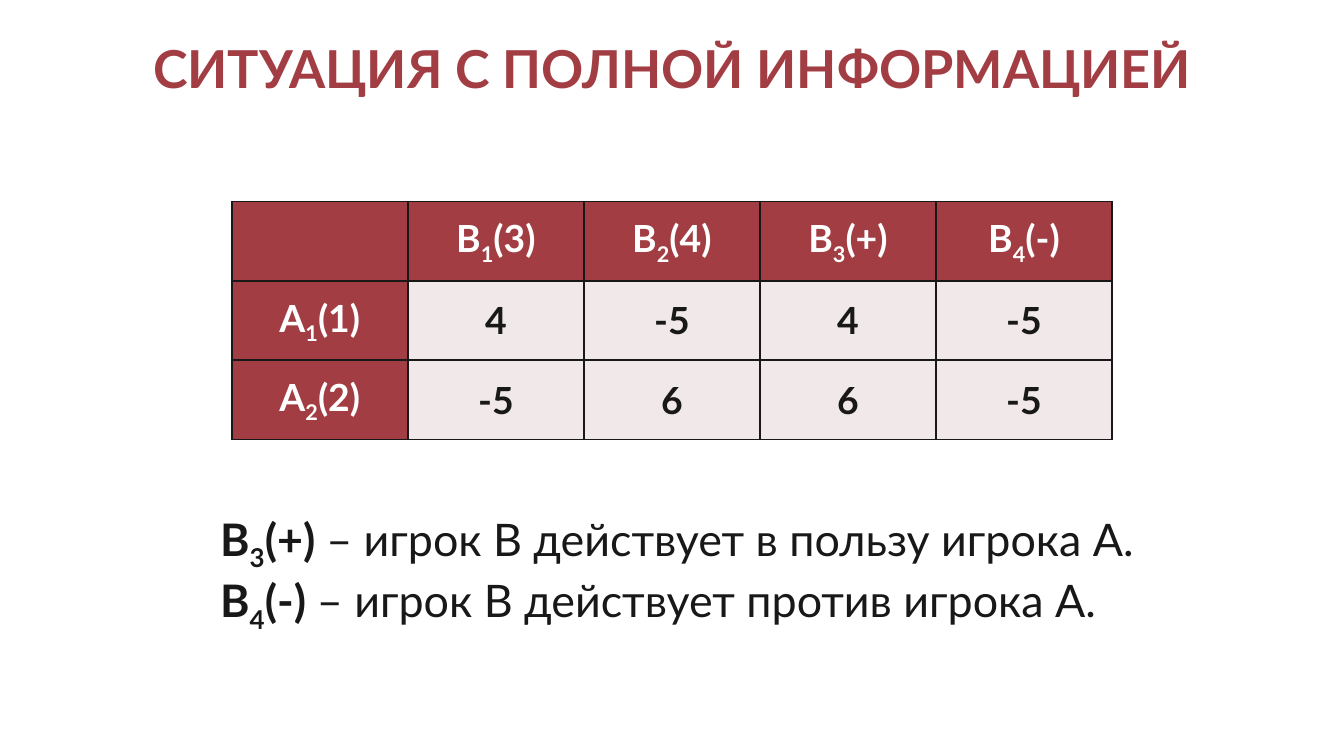
"""Build the slide about a payoff matrix under complete information."""
from lxml import etree
from pptx import Presentation
from pptx import util as u
from pptx.dml.color import RGBColor
from pptx.enum import text
from pptx.oxml import ns

HEADING = "СИТУАЦИЯ С ПОЛНОЙ ИНФОРМАЦИЕЙ"
STRATEGIES_B = [("B", "1", "(3)"), ("B", "2", "(4)"), ("B", "3", "(+)"), ("B", "4", "(-)")]
STRATEGIES_A = [("A", "1", "(1)"), ("A", "2", "(2)")]
PAYOFFS = [("4", "-5", "4", "-5"), ("-5", "6", "6", "-5")]
LEGEND = [
    (("B", "3", "(+) "), "– игрок В действует в пользу игрока А."),
    (("B", "4", "(-) "), "– игрок В действует против игрока А."),
]

COLORS = {"accent": "A23E43", "pale": "F0E8E9", "ink": "181818", "white": "FFFFFF"}
SLIDE_WIDTH = 10
SLIDE_HEIGHT = SLIDE_WIDTH * 9 / 16
COLUMN, ROW = 1.31, 0.59
CELL_FORMAT = {
    "vertical_anchor": text.MSO_ANCHOR.MIDDLE,
    "margin_left": u.Inches(0.07),
    "margin_right": u.Inches(0.07),
    "margin_top": 0,
    "margin_bottom": 0,
}
HEADING_FORMAT = {
    "word_wrap": True,
    "auto_size": text.MSO_AUTO_SIZE.NONE,
    "vertical_anchor": text.MSO_ANCHOR.MIDDLE,
}


def apply(target, values):
    for name, value in values.items():
        setattr(target, name, value)


def rgb(color):
    return RGBColor.from_string(COLORS[color])


def add_run(paragraph, words, size, color, bold=True, subscript=False):
    run = paragraph.add_run()
    run.text = words
    apply(run.font, {"name": "Lato", "size": u.Pt(size), "bold": bold})
    run.font.color.rgb = rgb(color)
    if subscript:
        run._r.get_or_add_rPr().set("baseline", "-25000")


def add_strategy(paragraph, strategy, size, color):
    for index, words in enumerate(strategy):
        add_run(paragraph, words, size, color, subscript=index == 1)


def add_borders(cell):
    properties = cell._tc.get_or_add_tcPr()
    for side in ("lnL", "lnR", "lnT", "lnB"):
        line = etree.SubElement(properties, ns.qn(f"a:{side}"), w=str(u.Pt(1)))
        fill = etree.SubElement(line, ns.qn("a:solidFill"))
        etree.SubElement(fill, ns.qn("a:srgbClr"), val=COLORS["ink"])


def add_matrix(slide):
    rows = [[(), *STRATEGIES_B]]
    rows += [[name, *((value,) for value in values)] for name, values in zip(STRATEGIES_A, PAYOFFS)]
    size = len(rows), len(rows[0])
    width = COLUMN * size[1]
    matrix = slide.shapes.add_table(
        *size, u.Inches((SLIDE_WIDTH - width) / 2), u.Inches(1.5),
        u.Inches(width), u.Inches(ROW * size[0])
    ).table
    for column in matrix.columns:
        column.width = u.Inches(COLUMN)
    for r, row in enumerate(rows):
        matrix.rows[r].height = u.Inches(ROW)
        for c, entry in enumerate(row):
            fill, ink = ("accent", "white") if r == 0 or c == 0 else ("pale", "ink")
            cell = matrix.cell(r, c)
            apply(cell, CELL_FORMAT)
            add_borders(cell)
            cell.fill.solid()
            cell.fill.fore_color.rgb = rgb(fill)
            paragraph = cell.text_frame.paragraphs[0]
            paragraph.alignment = text.PP_ALIGN.CENTER
            add_strategy(paragraph, entry, 20, ink)


def add_legend(slide):
    legend = slide.shapes.add_textbox(
        u.Inches(1.54), u.Inches(3.76), u.Inches(7.17), u.Inches(0.91)
    ).text_frame
    apply(legend, {"word_wrap": True, "auto_size": text.MSO_AUTO_SIZE.SHAPE_TO_FIT_TEXT})
    for index, (strategy, meaning) in enumerate(LEGEND):
        paragraph = legend.add_paragraph() if index else legend.paragraphs[0]
        add_strategy(paragraph, strategy, 24, "ink")
        add_run(paragraph, meaning, 24, "ink", bold=False)


def main():
    deck = Presentation()
    deck.slide_width = u.Inches(SLIDE_WIDTH)
    deck.slide_height = u.Inches(SLIDE_HEIGHT)
    slide = deck.slides.add_slide(deck.slide_layouts[5])
    heading = slide.shapes.title
    apply(heading, {"left": u.Inches(0.5), "top": u.Inches(0.15),
                    "width": u.Inches(9), "height": u.Inches(0.7)})
    apply(heading.text_frame, HEADING_FORMAT)
    paragraph = heading.text_frame.paragraphs[0]
    paragraph.alignment = text.PP_ALIGN.CENTER
    add_run(paragraph, HEADING, 28, "accent")
    add_matrix(slide)
    add_legend(slide)
    deck.save("out.pptx")


if __name__ == "__main__":
    main()
